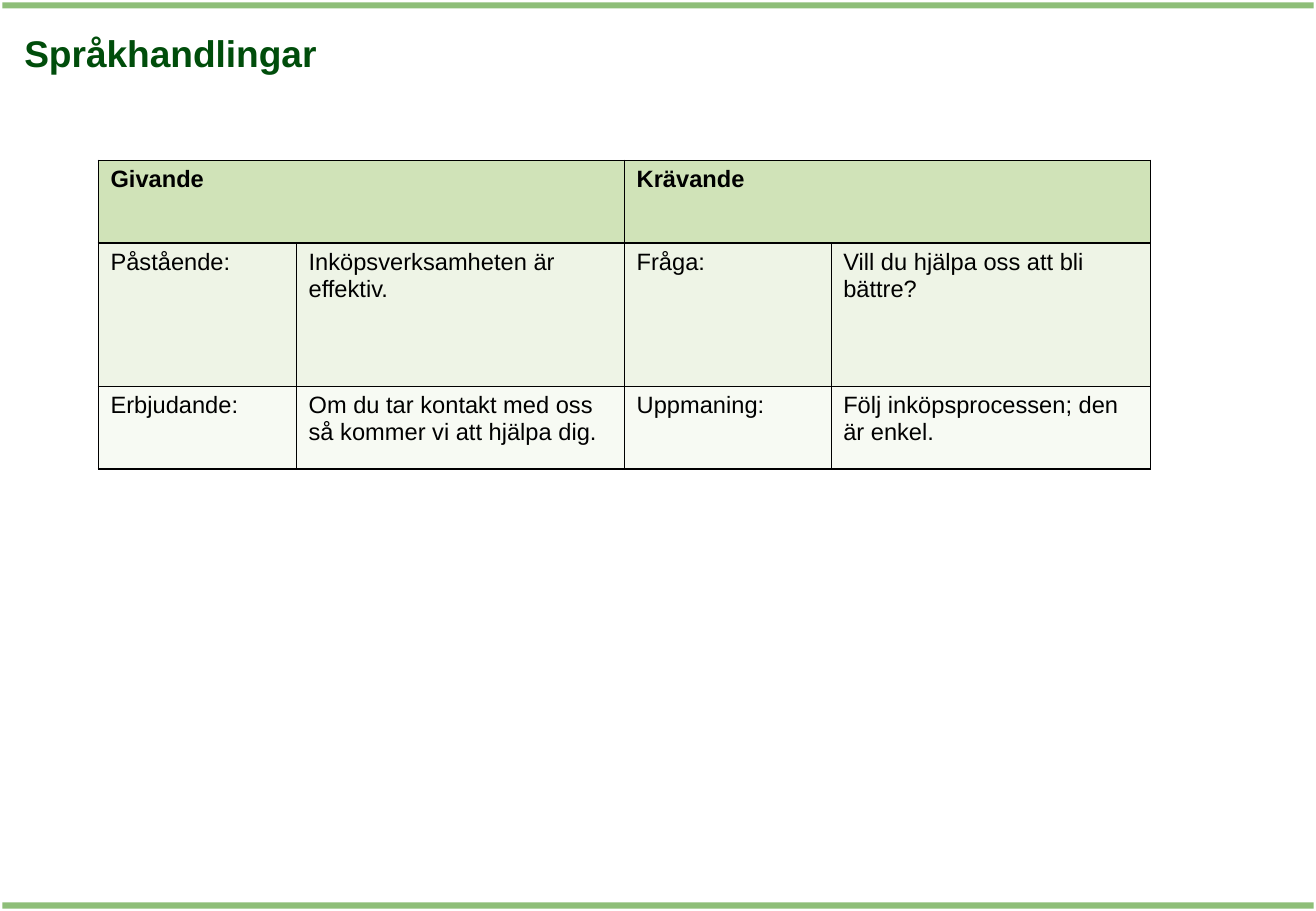
from dataclasses import dataclass

import lxml.etree
import pptx
import pptx.dml.color
import pptx.enum.shapes
import pptx.enum.text
import pptx.oxml.ns
import pptx.util

SLIDE_WIDTH = pptx.util.Inches(10.83)
SLIDE_HEIGHT = pptx.util.Inches(7.5)
GRID_COLUMNS = 108.3
GRID_ROWS = 75

COLORS = {
    "bar": "8EBE78",
    "title": "004D0B",
    "text": "000000",
    "border": "000000",
    "header": "D0E3B8",
    "statement": "EEF4E6",
    "offer": "F7FAF3",
}


@dataclass
class Area:
    left: float
    top: float
    width: float
    height: float


@dataclass
class TableRow:
    height: float
    fill: str
    texts: tuple[str, ...]
    header: bool = False


BARS = (Area(0.2, 0.2, 107.9, 0.5), Area(0.2, 74.3, 107.9, 0.5))
TITLE_AREA = Area(1.4, 2.1, 105.5, 8.8)
TABLE_LEFT, TABLE_TOP = 8.1, 13.2
COLUMN_WIDTHS = (16.3, 27, 17, 26.3)
TABLE_ROWS = (
    TableRow(6.8, "header", ("Givande", "", "Krävande", ""), header=True),
    TableRow(11.8, "statement", (
        "Påstående:", "Inköpsverksamheten är effektiv.",
        "Fråga:", "Vill du hjälpa oss att bli bättre?")),
    TableRow(6.8, "offer", (
        "Erbjudande:", "Om du tar kontakt med oss så kommer vi att hjälpa dig.",
        "Uppmaning:", "Följ inköpsprocessen; den är enkel.")),
)


def across(columns: float) -> int:
    return round(SLIDE_WIDTH * columns / GRID_COLUMNS)


def down(rows: float) -> int:
    return round(SLIDE_HEIGHT * rows / GRID_ROWS)


def place(area: Area) -> tuple[int, int, int, int]:
    return across(area.left), down(area.top), across(area.width), down(area.height)


def rgb(name: str) -> pptx.dml.color.RGBColor:
    return pptx.dml.color.RGBColor.from_string(COLORS[name])


def write_text(text_frame, text: str, *, size: float, color: str = "text",
               bold: bool = False) -> None:
    text_frame.word_wrap = True
    paragraph = text_frame.paragraphs[0]
    paragraph.alignment = pptx.enum.text.PP_ALIGN.LEFT
    run = paragraph.add_run()
    run.text = text
    run.font.name = "Arial"
    run.font.size = pptx.util.Pt(size)
    run.font.bold = bold
    run.font.color.rgb = rgb(color)


def draw_bar(slide, area: Area) -> None:
    shape = slide.shapes.add_shape(
        pptx.enum.shapes.MSO_SHAPE.RECTANGLE, *place(area))
    shape.shadow.inherit = False
    shape.fill.solid()
    shape.fill.fore_color.rgb = rgb("bar")
    shape.line.fill.background()


def draw_title(slide, text: str) -> None:
    text_frame = slide.shapes.add_textbox(*place(TITLE_AREA)).text_frame
    text_frame.margin_left = text_frame.margin_right = across(0.6)
    text_frame.margin_top = text_frame.margin_bottom = down(0.4)
    write_text(text_frame, text, size=22, color="title", bold=True)


def set_borders(cell, widths: dict[str, float]) -> None:
    properties = cell._tc.get_or_add_tcPr()
    qualified = pptx.oxml.ns.qn
    for side, width in widths.items():
        line = lxml.etree.SubElement(
            properties, qualified(f"a:ln{side}"), w=str(pptx.util.Pt(width)))
        fill = lxml.etree.SubElement(line, qualified("a:solidFill"))
        lxml.etree.SubElement(fill, qualified("a:srgbClr"), val=COLORS["border"])


def draw_table(slide) -> None:
    area = Area(TABLE_LEFT, TABLE_TOP, sum(COLUMN_WIDTHS),
                sum(row.height for row in TABLE_ROWS))
    table = slide.shapes.add_table(
        len(TABLE_ROWS), len(COLUMN_WIDTHS), *place(area)).table
    table.first_row = table.horz_banding = False
    for column, width in zip(table.columns, COLUMN_WIDTHS):
        column.width = across(width)
    for row_index, row in enumerate(TABLE_ROWS):
        table.rows[row_index].height = down(row.height)
        for column_index, text in enumerate(row.texts):
            cell = table.cell(row_index, column_index)
            is_label = column_index % 2 == 0
            if row.header and is_label:
                cell.merge(table.cell(row_index, column_index + 1))
            inner = 1 if row.header else 0.25
            set_borders(cell, {"L": 1 if is_label else inner,
                               "R": inner if is_label else 1, "T": 1, "B": 1})
            cell.fill.solid()
            cell.fill.fore_color.rgb = rgb(row.fill)
            if text:
                write_text(cell.text_frame, text, size=14, bold=row.header)


def main() -> None:
    presentation = pptx.Presentation()
    presentation.slide_width = SLIDE_WIDTH
    presentation.slide_height = SLIDE_HEIGHT
    slide = presentation.slides.add_slide(presentation.slide_layouts[6])
    for bar in BARS:
        draw_bar(slide, bar)
    draw_title(slide, "Språkhandlingar")
    draw_table(slide)
    presentation.save("out.pptx")


if __name__ == "__main__":
    main()
